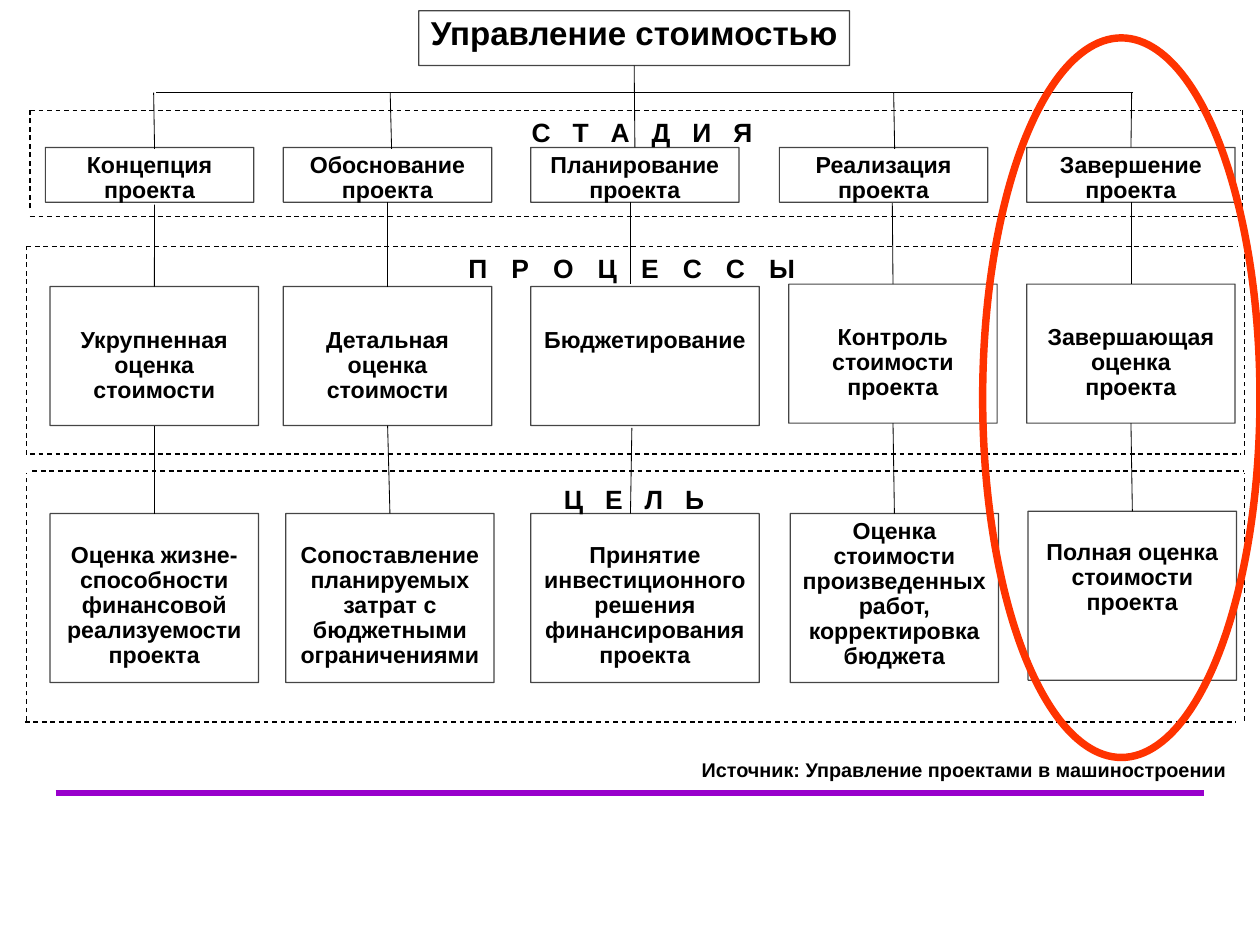
from lxml.etree import SubElement
from pptx import Presentation
from pptx.dml.color import RGBColor
from pptx.enum.dml import MSO_LINE
from pptx.enum.shapes import MSO_CONNECTOR, MSO_SHAPE
from pptx.enum.text import MSO_ANCHOR, PP_ALIGN
from pptx.oxml.ns import qn
from pptx.util import Cm, Pt

BLACK = RGBColor(0x00, 0x00, 0x00)
WHITE = RGBColor(0xFF, 0xFF, 0xFF)
VIOLET = RGBColor(0x99, 0x00, 0xCC)
ORANGE = RGBColor(0xFF, 0x33, 0x00)

STAGES = [
    (0.97, "Концепция проекта"),
    (6.05, "Обоснование проекта"),
    (11.33, "Планирование проекта"),
    (16.64, "Реализация проекта"),
    (21.92, "Завершение проекта"),
]
# left, top, width, text
PROCESSES = [
    (1.07, 6.12, 4.45, "Укрупненная оценка стоимости"),
    (6.05, 6.12, 4.45, "Детальная оценка стоимости"),
    (11.33, 6.12, 4.88, "Бюджетирование"),
    (16.84, 6.07, 4.45, "Контроль стоимости проекта"),
    (21.92, 6.07, 4.45, "Завершающая\vоценка\vпроекта"),
]
# left, top, width, text inset above, text
GOALS = [
    (1.07, 10.97, 4.45, 0.63,
     "Оценка жизне- способности финансовой реализуемости проекта"),
    (6.1, 10.97, 4.45, 0.63,
     "Сопоставление планируемых затрат с бюджетными ограничениями"),
    (11.33, 10.97, 4.88, 0.63,
     "Принятие инвестиционного решения финансирования проекта"),
    (16.87, 10.97, 4.45, 0.13,
     "Оценка стоимости произведенных работ, корректировка бюджета"),
    (21.95, 10.92, 4.45, 0.63, "Полная оценка стоимости проекта"),
]
# x1, y1, x2, y2
LINKS = [
    (13.56, 1.4, 13.56, 3.15),
    (24.18, 1.98, 3.33, 1.98),
    (3.28, 1.98, 3.3, 3.18),
    (8.33, 1.98, 8.36, 3.18),
    (19.08, 1.98, 19.1, 3.18),
    (24.16, 1.98, 24.13, 3.1),
    (3.3, 4.37, 3.3, 6.15),
    (8.26, 4.32, 8.26, 6.07),
    (13.46, 4.32, 13.46, 6.07),
    (19.05, 4.34, 19.05, 6.12),
    (24.13, 4.37, 24.13, 6.15),
    (3.3, 9.09, 3.3, 10.97),
    (8.33, 9.09, 8.31, 10.97),
    (13.49, 9.14, 13.46, 10.97),
    (19.08, 9.07, 19.05, 10.9),
    (24.13, 9.04, 24.18, 10.92),
]
FRAME_WIDTH = 25.86
# top edge (x, y), bottom edge (x, y), left x, right x, side top, side bottom
FRAMES = [
    ((0.64, 2.36), (0.64, 4.62), 0.64, 26.52, 2.36, 4.45),
    ((0.56, 5.26), (0.64, 9.7), 0.56, 26.57, 5.26, 9.71),
    ((0.69, 10.06), (0.53, 15.42), 0.56, 26.57, 10.11, 15.4),
]
# left, top, width, letter spacing in points, text
HEADINGS = [
    (11.1, 2.36, 5.28, 4.45, "С Т А Д И Я"),
    (9.75, 5.26, 7.72, 5.1, "П Р О Ц Е С С Ы"),
    (11.79, 10.19, 5.28, 4.45, "Ц Е Л Ь"),
]


class CostChart:
    font_name = "Arial"
    join_reach = Cm(0.08)

    def __init__(self, page):
        self.shapes = page.shapes
        self.boxes = []

    def style_text(self, paragraph, size):
        for span in paragraph.runs:
            span.font.name = self.font_name
            span.font.size = Pt(size)
            span.font.bold = True
            span.font.color.rgb = BLACK

    def box(self, left, top, width, height, text, size=14, inset=0.13):
        box = self.shapes.add_shape(
            MSO_SHAPE.RECTANGLE, Cm(left), Cm(top), Cm(width), Cm(height))
        box.shadow.inherit = False
        box.fill.solid()
        box.fill.fore_color.rgb = WHITE
        box.line.color.rgb = BLACK
        box.line.width = Pt(0.75)
        outline = box.element.spPr.find(qn("a:ln"))
        color = next(outline.iter(qn("a:srgbClr")))
        SubElement(color, qn("a:alpha")).set("val", "72000")
        frame = box.text_frame
        frame.word_wrap = True
        frame.vertical_anchor = MSO_ANCHOR.TOP
        frame.margin_left = frame.margin_right = Cm(0.25)
        frame.margin_top = Cm(inset)
        frame.margin_bottom = Cm(0.13)
        frame.text = text
        paragraph = frame.paragraphs[0]
        paragraph.alignment = PP_ALIGN.CENTER
        paragraph.line_spacing = 0.9
        self.style_text(paragraph, size)
        self.boxes.append(box)

    def label(self, left, top, width, height, text, size, spacing=0):
        label = self.shapes.add_textbox(
            Cm(left), Cm(top), Cm(width), Cm(height))
        label.text_frame.word_wrap = True
        label.text_frame.text = text
        paragraph = label.text_frame.paragraphs[0]
        self.style_text(paragraph, size)
        if spacing:
            for properties in label.element.iter(qn("a:rPr")):
                properties.set("spc", str(round(spacing * 100)))

    def line(self, x1, y1, x2, y2, color=BLACK, width=0.5, dash=None):
        line = self.shapes.add_connector(
            MSO_CONNECTOR.STRAIGHT, Cm(x1), Cm(y1), Cm(x2), Cm(y2))
        line.line.color.rgb = color
        line.line.width = Pt(width)
        if dash is not None:
            line.line.dash_style = dash
        SubElement(line.element.spPr, qn("a:effectLst"))
        return line

    def link(self, x1, y1, x2, y2):
        """Draw a line and join its ends to box sides whose middle they meet."""
        line = self.line(x1, y1, x2, y2)
        for box in self.boxes:
            middle = box.left + box.width // 2
            if self.meets(x1, y1, middle, box.top + box.height):
                line.begin_connect(box, 2)
            if self.meets(x2, y2, middle, box.top):
                line.end_connect(box, 0)

    def meets(self, x, y, site_x, site_y):
        return (abs(Cm(x) - site_x) <= self.join_reach
                and abs(Cm(y) - site_y) <= self.join_reach)

    def dashed_frame(self, top_edge, bottom_edge, left, right, top, bottom):
        edges = [(x, y, x + FRAME_WIDTH, y) for x, y in (top_edge, bottom_edge)]
        edges += [(x, bottom, x, top) for x in (left, right)]
        for edge in edges:
            self.line(*edge, width=0.75, dash=MSO_LINE.DASH)

    def ring(self, left, top, width, height):
        ring = self.shapes.add_shape(
            MSO_SHAPE.OVAL, Cm(left), Cm(top), Cm(width), Cm(height))
        ring.shadow.inherit = False
        ring.fill.background()
        ring.line.color.rgb = ORANGE
        ring.line.width = Pt(4.5)


def main():
    deck = Presentation()
    deck.slide_width, deck.slide_height = Cm(26.9), Cm(20.27)
    chart = CostChart(deck.slides.add_slide(deck.slide_layouts[6]))

    chart.line(1.19, 16.94, 25.7, 16.94, VIOLET, 4)
    chart.box(8.94, 0.23, 9.2, 1.17, "Управление стоимостью", size=20)
    for left, text in STAGES:
        chart.box(left, 3.15, 4.45, 1.17, text)
    for left, top, width, text in PROCESSES:
        chart.box(left, top, width, 2.97, text, inset=0.89)
    for left, top, width, inset, text in GOALS:
        chart.box(left, top, width, 3.61, text, inset=inset)
    for ends in LINKS:
        chart.link(*ends)
    for frame in FRAMES:
        chart.dashed_frame(*frame)
    for left, top, width, spacing, text in HEADINGS:
        chart.label(left, top, width, 0.94, text, 16, spacing)
    chart.label(14.73, 16.05, 12.1, 0.76,
                "Источник: Управление проектами в машиностроении", 12)
    chart.ring(20.98, 0.81, 5.92, 15.37)
    deck.save("out.pptx")


if __name__ == "__main__":
    main()
